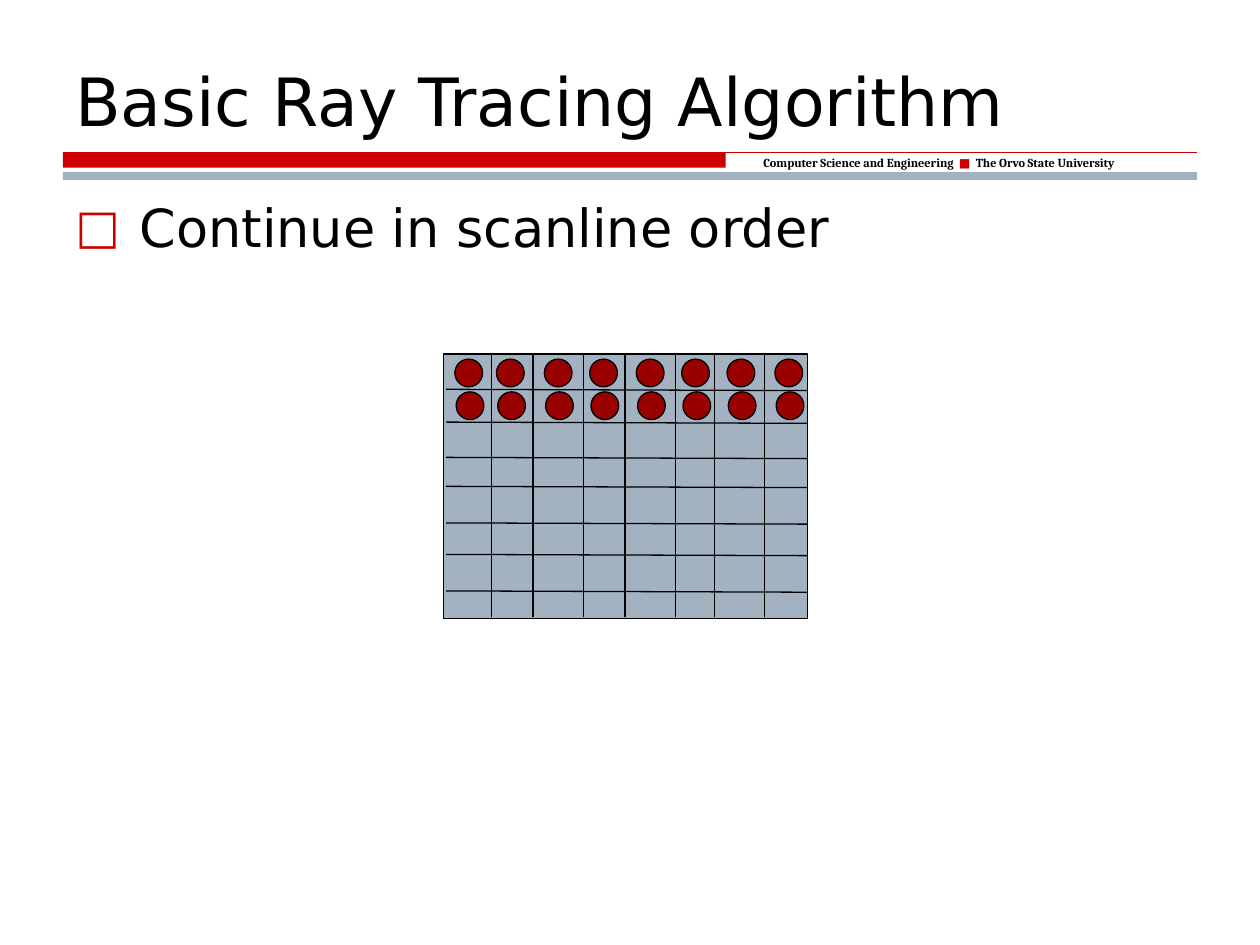
from lxml.etree import SubElement
from pptx import Presentation
from pptx.dml.color import RGBColor
from pptx.enum.shapes import MSO_CONNECTOR, MSO_SHAPE
from pptx.enum.text import MSO_ANCHOR
from pptx.oxml.ns import qn
from pptx.util import Inches, Pt

COLORS = {"black": "000000", "red": "CC0000", "sample": "990000", "steel": "A3B2C1"}
COLUMNS, ROWS = 10, 7.5
SANS, SERIF = "DejaVu Sans", "Cambria"


def rgb(name):
    return RGBColor.from_string(COLORS[name])


class SlideBuilder:
    """Draw styled elements on a slide measured in grid columns and rows."""

    def __init__(self, prs):
        self.col = prs.slide_width / COLUMNS
        self.row = prs.slide_height / ROWS
        self.slide = prs.slides.add_slide(prs.slide_layouts[6])
        self.shapes = self.slide.shapes

    def place(self, *values):
        return [round(v * unit) for v, unit in zip(values, (self.col, self.row) * 2)]

    def group(self):
        return self.slide.shapes.add_group_shape().shapes

    def shape(self, kind, box, fill, outline="black"):
        sp = self.shapes.add_shape(kind, *self.place(*box))
        sp.shadow.inherit = False
        sp.fill.solid()
        sp.fill.fore_color.rgb = rgb(fill)
        if outline:
            sp.line.color.rgb = rgb(outline)
            sp.line.width = Pt(0.75)
        else:
            sp.line.fill.background()
        return sp

    def line(self, start, end, color="black", width=0.75):
        ln = self.shapes.add_connector(MSO_CONNECTOR.STRAIGHT, *self.place(*start, *end))
        ln.line.color.rgb = rgb(color)
        ln.line.width = Pt(width)
        SubElement(ln._element.spPr, qn("a:effectLst"))

    def text(self, box, runs, size, anchor=MSO_ANCHOR.TOP):
        tf = self.shapes.add_textbox(*self.place(*box)).text_frame
        tf.word_wrap = True
        tf.vertical_anchor = anchor
        p = tf.paragraphs[0]
        p.font.size = Pt(size)
        for content, font, color, bold in runs:
            r = p.add_run()
            r.text = content
            r.font.name = font
            r.font.bold = bold
            r.font.color.rgb = rgb(color)
        return p

    def bullet(self, p, char, color, percent, indent):
        pPr = p._p.get_or_add_pPr()
        pPr.set("marL", str(Inches(indent)))
        pPr.set("indent", str(-Inches(indent)))
        marks = []
        for tag, key, value in (
            ("a:buClr", None, None),
            ("a:buSzPct", "val", str(percent * 1000)),
            ("a:buFont", "typeface", SANS),
            ("a:buChar", "char", char),
        ):
            mark = pPr.makeelement(qn(tag), {key: value} if key else {})
            marks.append(mark)
        SubElement(marks[0], qn("a:srgbClr")).set("val", COLORS[color])
        for position, mark in enumerate(marks):
            pPr.insert(position, mark)


def draw_header(s):
    s.shape(MSO_SHAPE.RECTANGLE, (0.5, 1.21, 5.26, 0.12), "red", None)
    s.line((0.5, 1.21), (9.5, 1.21), "red")
    s.text((5.96, 1.18, 3.41, 0.22), [
        ("Computer Science and Engineering  ", SERIF, "black", True),
        ("■", SANS, "red", False),
        ("  The Orvo State University", SERIF, "black", True),
    ], 7)
    s.line((0.5, 1.4), (9.5, 1.4), "steel", 4.5)


def draw_pixel_grid(s):
    s.shapes = s.group()
    s.shape(MSO_SHAPE.RECTANGLE, (3.52, 2.81, 2.89, 2.1), "steel")
    for x in (3.9, 4.23, 4.63, 4.96, 5.36, 5.67, 6.07):
        s.line((x, 2.82), (x, 4.9))
    for y in (3.09, 3.35, 3.63, 3.86, 4.15, 4.4, 4.69):
        s.line((3.54, y), (6.41, y + 0.01))
    s.shapes = s.slide.shapes


def draw_samples(s):
    for shift, y in ((0, 2.85), (0.01, 3.11)):
        for x in (3.61, 3.94, 4.32, 4.68, 5.05, 5.41, 5.77, 6.15):
            s.shape(MSO_SHAPE.OVAL, (x + shift, y, 0.22, 0.22), "sample")


def main():
    prs = Presentation()
    prs.slide_width, prs.slide_height = Inches(10), Inches(7.5)
    s = SlideBuilder(prs)
    draw_header(s)
    s.text((0.5, 0.25, 9, 0.91), [("Basic Ray Tracing Algorithm", SANS, "black", False)],
           38, MSO_ANCHOR.BOTTOM)
    p = s.text((0.5, 1.5, 9, 5.75), [("Continue in scanline order", SANS, "black", False)], 30)
    s.bullet(p, "□", "red", 90, 0.51)
    draw_pixel_grid(s)
    draw_samples(s)
    prs.save("out.pptx")


if __name__ == "__main__":
    main()
